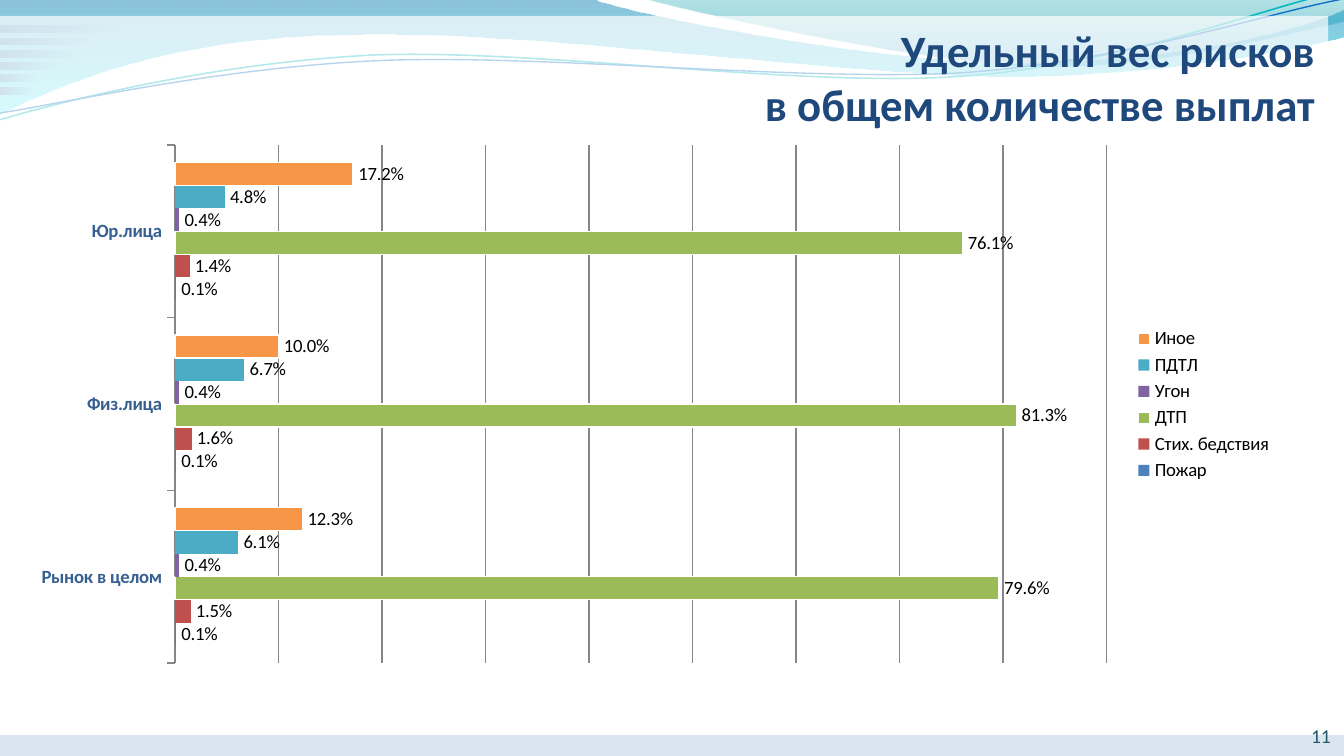
from math import cos, radians, sin

from lxml.etree import SubElement
from pptx import Presentation
from pptx.chart.data import CategoryChartData
from pptx.dml.color import RGBColor
from pptx.enum.chart import (XL_CHART_TYPE, XL_LABEL_POSITION,
                             XL_LEGEND_POSITION, XL_TICK_MARK)
from pptx.enum.shapes import MSO_SHAPE
from pptx.enum.text import MSO_ANCHOR, PP_ALIGN
from pptx.oxml.ns import qn
from pptx.util import Pt

FONT = "Calibri"
GREY = "868686"
TILT = 357.3
HUB = (359.3, 31.5)
# Each curve row is control 1, control 2 and end point; a pair is a straight step.
WAVE = [(0, 0), (316.8, -0.7), (342.7, 9.4, 478.1, 33.8, 545.8, 33.8),
        (614.2, 33.8, 689.8, 19.8, 720, 5), (720.7, 19.4),
        (707.8, 23.8, 626.4, 41, 537.1, 41), (447.8, 40.3, 275, 15.1, 185, 18.7),
        (92.9, 19.4, 33.1, 44.6, -0.7, 61.2)]
CREST = [(344.9, -0.7), (366.5, 5.8, 491, 33.1, 553.7, 35.3),
         (616.3, 37.4, 691.9, 17.3, 720, 11.5), (720, 0)]
TEAL = [(0, 64.1), (34.6, 54, 113.8, 33.8, 199.4, 29.5),
        (285.1, 25.9, 426.2, 46.8, 512.6, 41), (599.8, 35.3, 676.1, 4.3, 718.6, -5)]
BLUE = [(0, 60.5), (33.8, 55.4, 118.1, 36, 203.8, 32.4),
        (290.2, 28.8, 429.8, 43.9, 515.5, 38.9), (601.9, 33.1, 677.5, 7.2, 720, -0.7)]
CHART = (8.64, 72, 680.4, 289.5)
PLOT = (93.8, 77.7, 499, 277.6)
CATS = ["Рынок в целом", "Физ.лица", "Юр.лица"]
RISKS = [("Пожар", "4F81BD", (0.001, 0.001, 0.001)),
         ("Стих. бедствия", "C0504D", (0.015, 0.016, 0.014)),
         ("ДТП", "9BBB59", (0.796, 0.813, 0.761)),
         ("Угон", "8064A2", (0.004, 0.004, 0.004)),
         ("ПДТЛ", "4BACC6", (0.061, 0.067, 0.048)),
         ("Иное", "F79646", (0.123, 0.1, 0.172))]
EDGED = ("ДТП", "Иное")


def color(code):
    return RGBColor.from_string(code)


def pairs(row):
    return list(zip(row[::2], row[1::2]))


def level(row):
    """Turn a row back by the tilt, so that rotating the shape restores it."""
    c, s = cos(radians(-TILT)), sin(radians(-TILT))
    turned = []
    for x, y in pairs(row):
        dx, dy = x - HUB[0], y - HUB[1]
        turned += [HUB[0] + dx * c - dy * s, HUB[1] + dx * s + dy * c]
    return turned


def fade(shape, alphas):
    """Set the opacity, in percent, of each fill colour in turn."""
    for node, alpha in zip(shape._element.spPr.iter(qn("a:srgbClr")), alphas):
        SubElement(node, qn("a:alpha")).set("val", str(alpha * 1000))


def blend(shape, stops, angle):
    """Fill with a two-stop gradient of (position, colour, opacity)."""
    shape.fill.gradient()
    shape.fill.gradient_angle = angle
    for stop, (place, code, _) in zip(shape.fill.gradient_stops, stops):
        stop.position = place
        stop.color.rgb = color(code)
    fade(shape, [stop[2] for stop in stops])


class Deck:
    def __init__(self, width, height):
        self.show = Presentation()
        self.show.slide_width, self.show.slide_height = Pt(width), Pt(height)
        self.slide = self.show.slides.add_slide(self.show.slide_layouts[6])

    def curve(self, rows, close):
        """Draw the end points, then bend the steps that have controls."""
        ends = [(Pt(row[-2]), Pt(row[-1])) for row in rows]
        pen = self.slide.shapes.build_freeform(*ends[0], scale=1.0)
        pen.add_line_segments(ends[1:], close=close)
        shape = pen.convert_to_shape()
        shape.shadow.inherit = False
        steps = list(shape._element.iter(qn("a:lnTo")))
        for step, row in zip(steps, rows[1:]):
            if len(row) == 2:
                continue
            step.tag = qn("a:cubicBezTo")
            for spot, (x, y) in enumerate(pairs(row)[:2]):
                node = SubElement(step, qn("a:pt"))
                node.set("x", str(Pt(x) - shape.left))
                node.set("y", str(Pt(y) - shape.top))
                step.insert(spot, node)
        return shape

    def wave(self, rows, stops):
        shape = self.curve(rows, True)
        shape.line.fill.background()
        blend(shape, stops, 270)

    def stroke(self, rows, code, width):
        shape = self.curve([level(row) for row in rows], False)
        shape.rotation = TILT
        shape.fill.background()
        shape.line.color.rgb = color(code)
        shape.line.width = Pt(width)

    def rect(self, *box):
        shape = self.slide.shapes.add_shape(MSO_SHAPE.RECTANGLE, *map(Pt, box))
        shape.shadow.inherit = False
        shape.line.fill.background()
        return shape

    def band(self, box, code, alpha):
        shape = self.rect(*box)
        shape.fill.solid()
        shape.fill.fore_color.rgb = color(code)
        fade(shape, [alpha])

    def text(self, box, lines, size, code, bold=False):
        frame = self.slide.shapes.add_textbox(*map(Pt, box)).text_frame
        frame.word_wrap = True
        frame.vertical_anchor = MSO_ANCHOR.MIDDLE
        frame.text = "\n".join(lines)
        for para in frame.paragraphs:
            para.alignment = PP_ALIGN.RIGHT
            self.style(para.font, size, code, bold)

    def style(self, font, size, code, bold=False):
        font.name, font.size, font.bold = FONT, Pt(size), bold
        font.color.rgb = color(code)

    def chart(self, box, plot):
        data = CategoryChartData(number_format="0.0%")
        data.categories = CATS
        for name, _, values in RISKS:
            data.add_series(name, values)
        chart = self.slide.shapes.add_chart(
            XL_CHART_TYPE.BAR_CLUSTERED, *map(Pt, box), data).chart
        self.style(chart.font, 18, "000000")
        chart.has_title = False
        chart.has_legend = True
        chart.legend.position = XL_LEGEND_POSITION.RIGHT
        chart.legend.include_in_layout = False
        self.style(chart.legend.font, 10, "000000")
        self.axes(chart)
        self.bars(chart.plots[0])
        self.place(chart, box, plot)

    def axes(self, chart):
        names, scale = chart.category_axis, chart.value_axis
        self.style(names.tick_labels.font, 10, "376092", True)
        names.major_tick_mark = XL_TICK_MARK.OUTSIDE
        scale.visible = False
        scale.minimum_scale, scale.maximum_scale = 0, 0.9
        scale.major_unit = 0.1
        scale.has_major_gridlines = True
        scale.tick_labels.number_format = "0.0%"
        scale.tick_labels.number_format_is_linked = False
        for line in (names.format.line, scale.major_gridlines.format.line):
            line.color.rgb = color(GREY)
            line.width = Pt(0.75)

    def bars(self, plot):
        plot.gap_width = 150
        plot.overlap = 0
        plot.vary_by_categories = False
        for series, (name, code, _) in zip(plot.series, RISKS):
            series.format.fill.solid()
            series.format.fill.fore_color.rgb = color(code)
            if name in EDGED:
                series.format.line.color.rgb = color("FFFFFF")
                series.format.line.width = Pt(0.75)
            labels = series.data_labels
            labels.show_value = True
            labels.number_format = "0.0%"
            labels.number_format_is_linked = False
            labels.position = XL_LABEL_POSITION.OUTSIDE_END
            self.style(labels.font, 10, "000000")

    def place(self, chart, box, plot):
        """Fix the inner plot area as shares of the chart."""
        left, top, width, height = box
        x, y, w, h = plot
        area = chart._chartSpace.chart.plotArea
        for old in area.findall(qn("c:layout")):
            area.remove(old)
        layout = SubElement(area, qn("c:layout"))
        area.insert(0, layout)
        manual = SubElement(layout, qn("c:manualLayout"))
        marks = {"layoutTarget": "inner", "xMode": "edge", "yMode": "edge",
                 "x": (x - left) / width, "y": (y - top) / height,
                 "w": w / width, "h": h / height}
        for key, value in marks.items():
            SubElement(manual, qn("c:" + key)).set("val", str(value))


def main():
    deck = Deck(720, 405)
    deck.wave(WAVE, [(0, "0079AF", 45), (1, "00EBF8", 55)])
    deck.wave(CREST, [(0, "00A1A9", 30), (0.8, "008BBF", 45)])
    deck.stroke(TEAL, "0AB8BF", 0.85)
    deck.stroke(BLUE, "0F6FC6", 0.75)
    deck.band((0, 8.5, 711.5, 62), "FFFFFF", 70)
    for row, width in enumerate((60, 47.5, 42.5, 31, 20, 18)):
        strip = deck.rect(0, 13.8 + 6.6 * row, width, 3.6)
        blend(strip, [(0, "D1E2EF", 100), (1, "D1E2EE", 0)], 0)
    deck.band((0, 393.8, 720, 11.2), "4F81BD", 20)
    deck.text((552, 383.6, 168, 21.6), ["11"], 10.5, "215968")
    deck.text((110.5, 9.7, 601, 62.6),
              ["Удельный вес рисков", "в общем количестве выплат"], 24, "1F497D", True)
    deck.chart(CHART, PLOT)
    deck.show.save("out.pptx")


if __name__ == "__main__":
    main()
